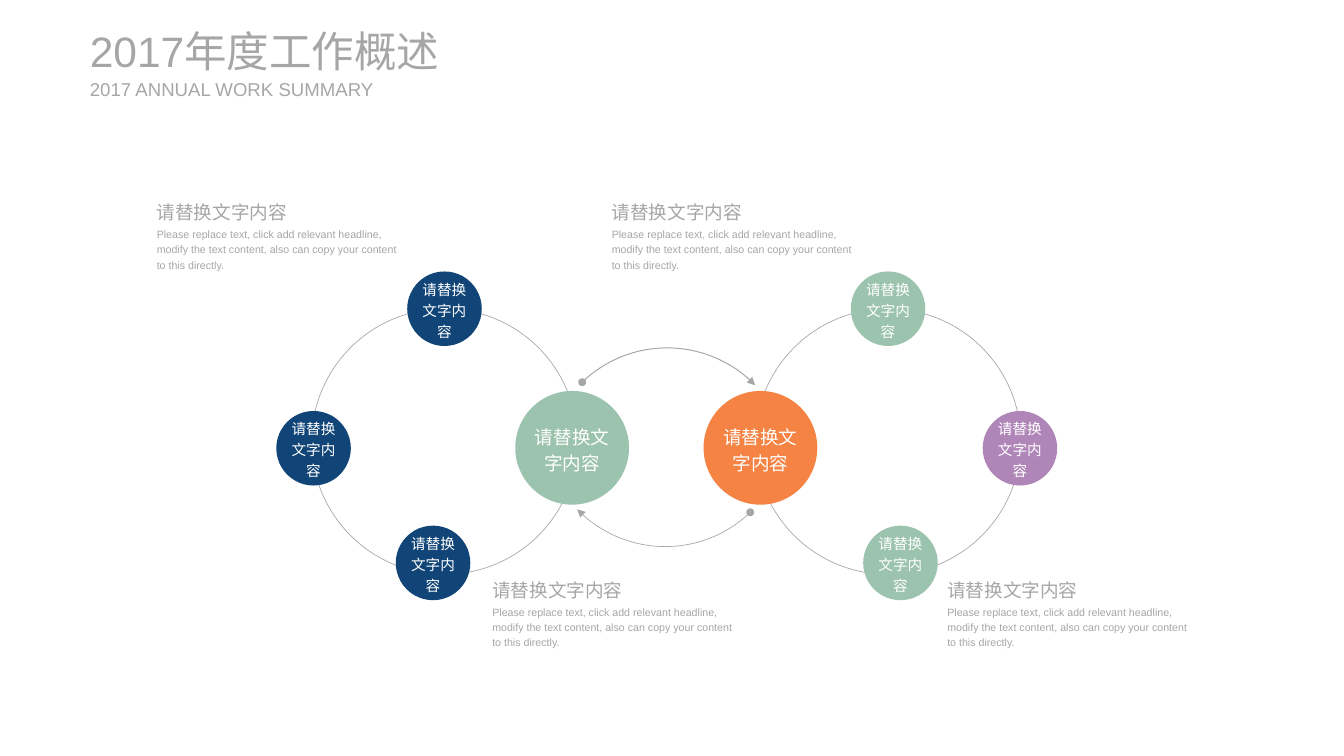
"""Build the annual work summary slide with two linked rings of topics."""
from dataclasses import dataclass

from lxml.etree import SubElement
from pptx import Presentation
from pptx.dml.color import RGBColor
from pptx.enum.shapes import MSO_SHAPE
from pptx.enum.text import MSO_ANCHOR, MSO_AUTO_SIZE, PP_ALIGN
from pptx.oxml.ns import qn
from pptx.shapes.autoshape import Shape
from pptx.slide import Slide
from pptx.util import Inches, Pt

GREY, WHITE = "A6A6A6", "FFFFFF"
NAVY, GREEN, ORANGE, PURPLE = "114577", "9CC3AE", "F58344", "B086B8"
LABEL = "请替换文字内容"
BODY = ("Please replace text, click add relevant headline, modify the text "
        "content, also can copy your content to this directly.")
HUB_SIZE, NODE_SIZE, RING_SIZE, ARC_SIZE = 1.19, 0.78, 2.78, 2.56
ARC_UNITS_PER_DEGREE = 0.6


@dataclass
class Disc:
    left: float
    top: float
    color: str
    size: float = NODE_SIZE
    points: int = 11


@dataclass
class Arc:
    left: float
    top: float
    start: int
    end: int
    width: float


@dataclass
class Note:
    left: float
    top: float


RINGS = [(3.26, 3.23), (7.9, 3.23)]
DISCS = [
    Disc(5.39, 4.09, GREEN, HUB_SIZE, 14),
    Disc(2.89, 4.3, NAVY),
    Disc(4.26, 2.84, NAVY),
    Disc(4.14, 5.5, NAVY),
    Disc(7.36, 4.09, ORANGE, HUB_SIZE, 14),
    Disc(10.28, 4.3, PURPLE),
    Disc(8.9, 2.84, GREEN),
    Disc(9.03, 5.5, GREEN),
]
ARCS = [Arc(5.7, 3.64, 226, 316, 0.75), Arc(5.68, 3.16, 46, 136, 0.5)]
NOTES = [Note(5.15, 6.01), Note(9.91, 6.01), Note(1.64, 2.06), Note(6.4, 2.06)]


def rgb(color: str) -> RGBColor:
    return RGBColor.from_string(color)


def write(s: Shape, text: str, points: int, color: str = GREY,
          align: PP_ALIGN = PP_ALIGN.LEFT, anchor: MSO_ANCHOR = MSO_ANCHOR.MIDDLE,
          spacing: float = 1.0, wrap: bool = True) -> None:
    tf = s.text_frame
    tf.margin_left = tf.margin_right = tf.margin_top = tf.margin_bottom = 0
    tf.word_wrap = wrap
    tf.vertical_anchor = anchor
    p = tf.paragraphs[0]
    p.alignment, p.line_spacing = align, spacing
    p.add_run().text = text
    p.font.name, p.font.size = "Arial", Pt(points)
    p.font.color.rgb = rgb(color)


def add_outline(slide: Slide, kind: MSO_SHAPE, left: float, top: float,
                size: float, width: float) -> Shape:
    s = slide.shapes.add_shape(kind, Inches(left), Inches(top), Inches(size), Inches(size))
    s.shadow.inherit = False
    s.fill.background()
    s.line.color.rgb = rgb(GREY)
    s.line.width = Pt(width)
    return s


def add_disc(slide: Slide, disc: Disc) -> None:
    s = slide.shapes.add_shape(MSO_SHAPE.OVAL, Inches(disc.left), Inches(disc.top),
                               Inches(disc.size), Inches(disc.size))
    s.shadow.inherit = False
    s.fill.solid()
    s.fill.fore_color.rgb = rgb(disc.color)
    s.line.fill.background()
    write(s, LABEL, disc.points, WHITE, PP_ALIGN.CENTER, spacing=1.2)


def add_arc(slide: Slide, arc: Arc) -> None:
    s = add_outline(slide, MSO_SHAPE.ARC, arc.left, arc.top, ARC_SIZE, arc.width)
    s.adjustments[0] = arc.start * ARC_UNITS_PER_DEGREE
    s.adjustments[1] = arc.end * ARC_UNITS_PER_DEGREE
    ln = s.line._get_or_add_ln()
    SubElement(ln, qn("a:headEnd"), type="oval")
    SubElement(ln, qn("a:tailEnd"), type="triangle")


def add_text(slide: Slide, left: float, top: float, width: float, height: float) -> Shape:
    s = slide.shapes.add_textbox(Inches(left), Inches(top), Inches(width), Inches(height))
    s.text_frame.auto_size = MSO_AUTO_SIZE.SHAPE_TO_FIT_TEXT
    return s


def add_note(slide: Slide, note: Note) -> None:
    body = add_text(slide, note.left, note.top + 0.3, 2.58, 0.48)
    write(body, BODY, 8, anchor=MSO_ANCHOR.TOP, spacing=1.2)
    heading = add_text(slide, note.left, note.top, 1.37, 0.28)
    write(heading, LABEL, 14, anchor=MSO_ANCHOR.TOP, spacing=1.2, wrap=False)


def add_headings(slide: Slide) -> None:
    title = slide.shapes.title
    title.left, title.top = Inches(0.94), Inches(0.26)
    title.width, title.height = Inches(4.32), Inches(0.54)
    write(title, "2017年度工作概述", 32)
    write(add_text(slide, 0.94, 0.81, 3.07, 0.24), "2017 ANNUAL WORK SUMMARY", 14)


def main() -> None:
    prs = Presentation()
    prs.slide_width, prs.slide_height = Inches(14.06), Inches(7.91)
    slide = prs.slides.add_slide(prs.slide_layouts[5])
    for left, top in RINGS:
        add_outline(slide, MSO_SHAPE.OVAL, left, top, RING_SIZE, 0.5)
    for disc in DISCS:
        add_disc(slide, disc)
    for arc in ARCS:
        add_arc(slide, arc)
    for note in NOTES:
        add_note(slide, note)
    add_headings(slide)
    prs.save("out.pptx")


if __name__ == "__main__":
    main()
